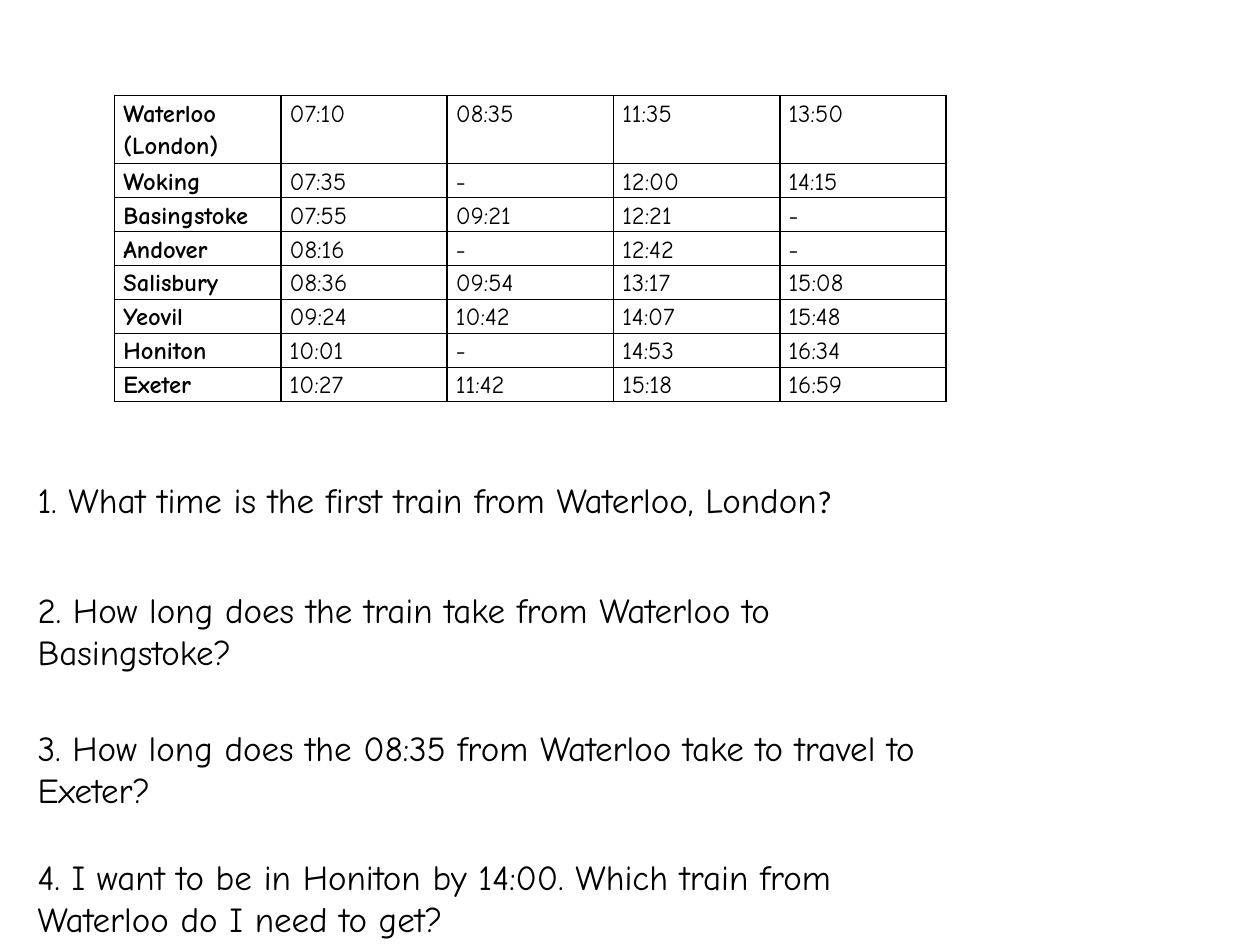
import pptx
import pptx.dml.color
import pptx.enum.text
import pptx.oxml
import pptx.oxml.ns
import pptx.util
from pptx.util import Inches, Pt

FONT = "Comic Neue"
BLACK = "000000"

# Content: one row per station, one column per train
TIMETABLE = [
    ("Waterloo (London)", "07:10", "08:35", "11:35", "13:50"),
    ("Woking", "07:35", "-", "12:00", "14:15"),
    ("Basingstoke", "07:55", "09:21", "12:21", "-"),
    ("Andover", "08:16", "-", "12:42", "-"),
    ("Salisbury", "08:36", "09:54", "13:17", "15:08"),
    ("Yeovil", "09:24", "10:42", "14:07", "15:48"),
    ("Honiton", "10:01", "-", "14:53", "16:34"),
    ("Exeter", "10:27", "11:42", "15:18", "16:59"),
]

# Top, width, height and runs (text, font, size) of each question
QUESTIONS = [
    (3.75, 8.58, 0.44, [("1. What time is the first train from Waterloo, London", FONT, 20),
                        ("?", "Calibri", 18)]),
    (4.62, 7.56, 0.77, [("2. How long does the train take from Waterloo to Basingstoke?", FONT, 20)]),
    (5.72, 7.95, 0.77, [("3. How long does the 08:35 from Waterloo take to travel to Exeter?", FONT, 20)]),
    (6.74, 7.56, 0.77, [("4. I want to be in Honiton by 14:00. Which train from Waterloo do I need to get?",
                         FONT, 20)]),
]
COLUMN_WIDTH = 1.32
ROW_HEIGHT = 0.27


def set_font(font, name, size, bold=False):
    font.name = name
    font.size = Pt(size)
    font.bold = bold
    font.color.rgb = pptx.dml.color.RGBColor.from_string(BLACK)


def add_borders(cell):
    """Draw a 1 pt line on all four sides; lines come before the fill."""
    properties = cell._tc.get_or_add_tcPr()
    for position, side in enumerate(("lnL", "lnR", "lnT", "lnB")):
        line = pptx.oxml.parse_xml(
            f'<a:{side} {pptx.oxml.ns.nsdecls("a")} w="{Pt(1)}"><a:solidFill>'
            f'<a:srgbClr val="{BLACK}"/></a:solidFill></a:{side}>')
        properties.insert(position, line)


def add_timetable(page):
    rows, columns = len(TIMETABLE), len(TIMETABLE[0])
    table = page.shapes.add_table(
        rows, columns, Inches(0.91), Inches(0.76),
        Inches(columns * COLUMN_WIDTH), Inches((rows + 1) * ROW_HEIGHT)).table
    table.first_row = table.horz_banding = False
    for column in table.columns:
        column.width = Inches(COLUMN_WIDTH)
    for row_index, stops in enumerate(TIMETABLE):
        # The first station name takes two lines
        table.rows[row_index].height = Inches(ROW_HEIGHT * (2 if row_index == 0 else 1))
        for column_index, text in enumerate(stops):
            cell = table.cell(row_index, column_index)
            cell.margin_left = cell.margin_right = Inches(0.07)
            cell.margin_top = cell.margin_bottom = 0
            cell.fill.background()
            add_borders(cell)
            cell.text = text
            para = cell.text_frame.paragraphs[0]
            para.line_spacing = 1.15
            set_font(para.font, FONT, 14, bold=column_index == 0)


def add_question(page, top, width, height, runs):
    box = page.shapes.add_textbox(Inches(0.2), Inches(top), Inches(width), Inches(height))
    frame = box.text_frame
    frame.word_wrap = True
    frame.auto_size = pptx.enum.text.MSO_AUTO_SIZE.SHAPE_TO_FIT_TEXT
    para = frame.paragraphs[0]
    for text, name, size in runs:
        span = para.add_run()
        span.text = text
        set_font(span.font, name, size)


def main():
    deck = pptx.Presentation()
    deck.slide_width, deck.slide_height = Inches(10), Inches(7.5)
    page = deck.slides.add_slide(deck.slide_layouts[6])
    add_timetable(page)
    for question in QUESTIONS:
        add_question(page, *question)
    deck.save("out.pptx")


if __name__ == "__main__":
    main()
